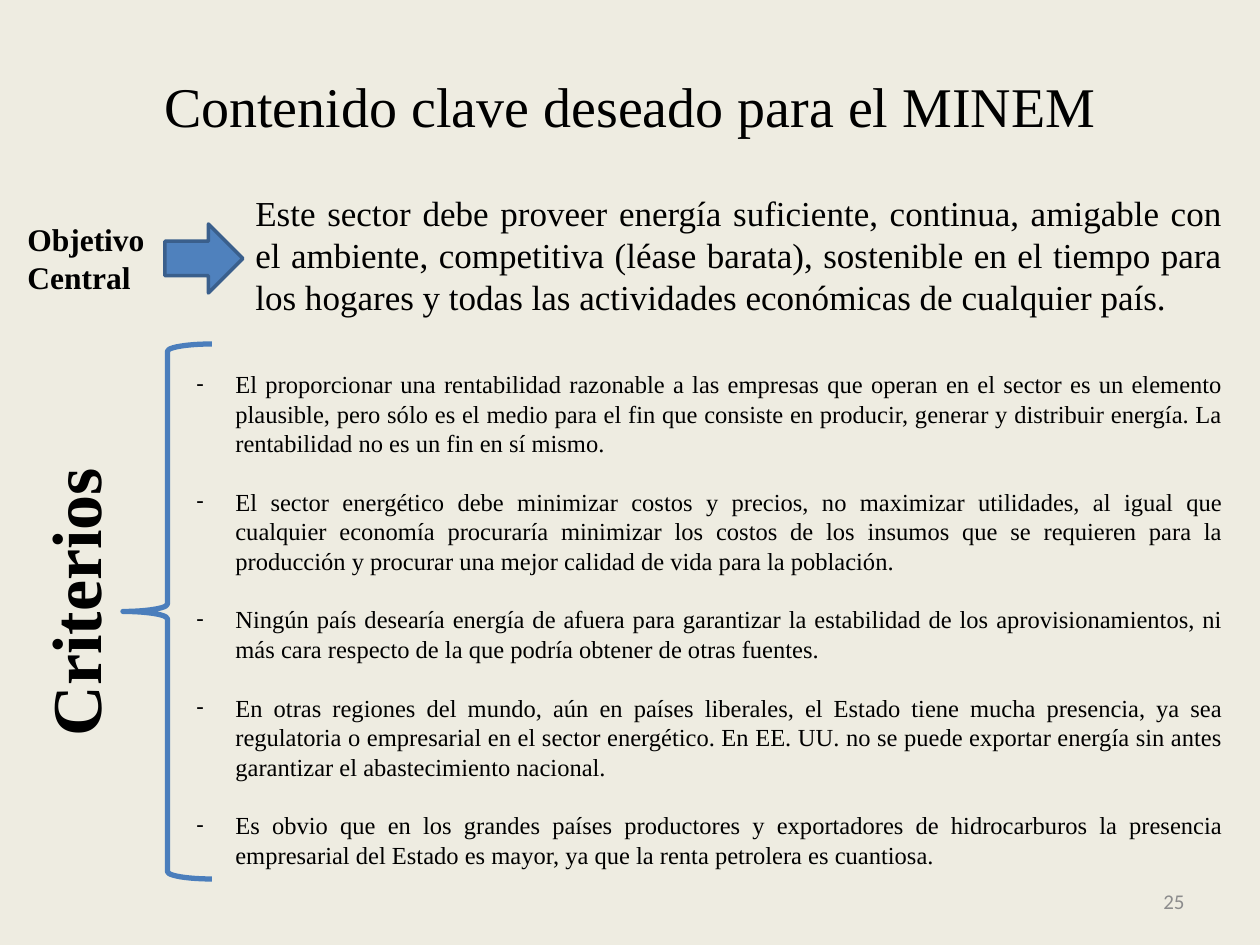
"""Build the slide on the key content wanted for the MINEM."""
from dataclasses import dataclass

from lxml.etree import SubElement
from pptx import Presentation
from pptx.dml.color import RGBColor
from pptx.enum.shapes import MSO_SHAPE
from pptx.enum.text import MSO_ANCHOR, PP_ALIGN
from pptx.oxml.ns import qn
from pptx.util import Pt

TITLE = "Contenido clave deseado para el MINEM"
GOAL_LABEL = "Objetivo Central"
GOAL = (
    "Este sector debe proveer energía suficiente, continua, amigable con el ambiente, "
    "competitiva (léase barata), sostenible en el tiempo para los hogares y todas las "
    "actividades económicas de cualquier país."
)
CRITERIA_LABEL = "Criterios"
CRITERIA = [
    "El proporcionar una rentabilidad razonable a las empresas que operan en el sector es un "
    "elemento plausible, pero sólo es el medio para el fin que consiste en producir, generar y "
    "distribuir energía. La rentabilidad no es un fin en sí mismo.",
    "El sector energético debe minimizar costos y precios, no maximizar utilidades, al igual que "
    "cualquier economía procuraría minimizar los costos de los insumos que se requieren para la "
    "producción y procurar una mejor calidad de vida para la población.",
    "Ningún país desearía energía de afuera para garantizar la estabilidad de los "
    "aprovisionamientos, ni más cara respecto de la que podría obtener de otras fuentes.",
    "En otras regiones del mundo, aún en países liberales, el Estado tiene mucha presencia, ya "
    "sea regulatoria o empresarial en el sector energético. En EE. UU. no se puede exportar "
    "energía sin antes garantizar el abastecimiento nacional.",
    "Es obvio que en los grandes países productores y exportadores de hidrocarburos la presencia "
    "empresarial del Estado es mayor, ya que la renta petrolera es cuantiosa.",
]
PAGE_NUMBER = "25"

PX = 914400 // 126
PLACES = {
    "title": (25, 26, 1211, 158),
    "number": (903, 876, 294, 50),
    "goal": (243, 185, 992, 140),
    "criteria": (184, 363, 1052, 518),
    "goal_label": (15, 214, 159, 89),
    "arrow": (165, 224, 78, 69),
    "criteria_label": (25, 354, 111, 496),
    "brace": (123, 344, 89, 535),
}
BULLET_INDENT = 39


@dataclass(frozen=True)
class Theme:
    """Hold the colours, fonts and type sizes."""
    background: str = "EEECE1"
    ink: str = "000000"
    muted: str = "8C8C8C"
    accent: str = "4F81BD"
    arrow_line: str = "3A5F8C"
    brace_line: str = "4B7EBC"
    serif: str = "Times New Roman"
    sans: str = "Calibri"
    title: int = 32
    goal: int = 20
    label: int = 18
    big_label: int = 40
    criteria: int = 14
    number: int = 12
    criteria_gap: float = 16.8


THEME = Theme()


def place(name):
    """Return the EMU rectangle of a named part."""
    return [value * PX for value in PLACES[name]]


def write(para, text, size, align=PP_ALIGN.LEFT, bold=False, color=THEME.ink, font=THEME.serif):
    """Add one formatted run to a paragraph."""
    para.alignment = align
    span = para.add_run()
    span.text = text
    span.font.size = Pt(size)
    span.font.bold = bold
    span.font.name = font
    span.font.color.rgb = RGBColor.from_string(color)


def add_box(page, name, anchor=MSO_ANCHOR.TOP):
    """Add a wrapping text box and return its frame."""
    frame = page.shapes.add_textbox(*place(name)).text_frame
    frame.word_wrap = True
    frame.vertical_anchor = anchor
    return frame


def add_dash(para):
    """Give a paragraph a hanging dash bullet."""
    properties = para._p.get_or_add_pPr()
    properties.set("marL", str(BULLET_INDENT * PX))
    properties.set("indent", str(-BULLET_INDENT * PX))
    SubElement(properties, qn("a:buFont"), typeface=THEME.sans)
    SubElement(properties, qn("a:buChar"), char="-")


def add_outline(page, name, kind, line, width):
    """Add an unshadowed preset shape with an outline."""
    shape = page.shapes.add_shape(kind, *place(name))
    shape.shadow.inherit = False
    shape.line.color.rgb = RGBColor.from_string(line)
    shape.line.width = Pt(width)
    return shape


def main():
    """Compose and save the slide."""
    deck = Presentation()
    deck.slide_width, deck.slide_height = 1260 * PX, 945 * PX
    page = deck.slides.add_slide(deck.slide_layouts[5])
    page.background.fill.solid()
    page.background.fill.fore_color.rgb = RGBColor.from_string(THEME.background)

    title = page.shapes.title
    title.left, title.top, title.width, title.height = place("title")
    title.text_frame.vertical_anchor = MSO_ANCHOR.MIDDLE
    write(title.text_frame.paragraphs[0], TITLE, THEME.title, PP_ALIGN.CENTER)

    number = add_box(page, "number", MSO_ANCHOR.MIDDLE)
    write(number.paragraphs[0], PAGE_NUMBER, THEME.number, PP_ALIGN.RIGHT,
          color=THEME.muted, font=THEME.sans)

    goal = add_box(page, "goal")
    write(goal.paragraphs[0], GOAL, THEME.goal, PP_ALIGN.JUSTIFY)

    criteria = add_box(page, "criteria")
    for index, text in enumerate(CRITERIA):
        para = criteria.add_paragraph() if index else criteria.paragraphs[0]
        if index:
            para.space_before = Pt(THEME.criteria_gap)
        add_dash(para)
        write(para, text, THEME.criteria, PP_ALIGN.JUSTIFY)

    goal_label = add_box(page, "goal_label")
    write(goal_label.paragraphs[0], GOAL_LABEL, THEME.label, bold=True)

    arrow = add_outline(page, "arrow", MSO_SHAPE.RIGHT_ARROW, THEME.arrow_line, 2)
    arrow.fill.solid()
    arrow.fill.fore_color.rgb = RGBColor.from_string(THEME.accent)

    criteria_label = add_box(page, "criteria_label")
    criteria_label._txBody.bodyPr.set("vert", "vert270")
    write(criteria_label.paragraphs[0], CRITERIA_LABEL, THEME.big_label, PP_ALIGN.CENTER, bold=True)

    brace = add_outline(page, "brace", MSO_SHAPE.LEFT_BRACE, THEME.brace_line, 3)
    brace.fill.background()

    deck.save("out.pptx")


if __name__ == "__main__":
    main()
